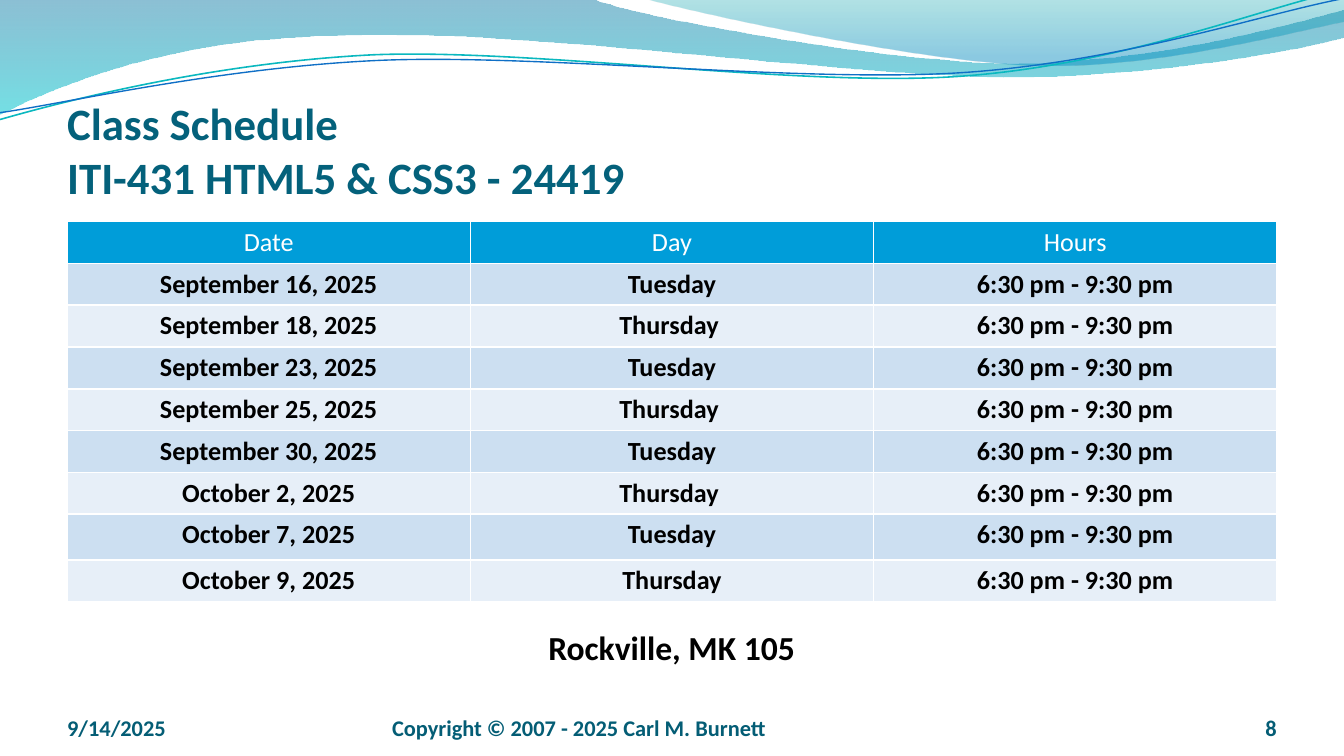
"""Build the class schedule slide with its wave header and session table."""
from dataclasses import dataclass

from lxml.etree import SubElement
from pptx import Presentation
from pptx.dml.color import RGBColor as Color
from pptx.enum.text import MSO_ANCHOR as Anchor, PP_ALIGN as Align
from pptx.oxml.ns import qn
from pptx.util import Cm, Pt


@dataclass(frozen=True)
class Theme:
    font: str = "Calibri"
    title: str = "04617B"
    footer: str = "045D75"
    ink: str = "000000"
    white: str = "FFFFFF"
    header: str = "009DD9"
    bands: tuple = ("CCDFF1", "E7EFF8")
    back_wave: tuple = ((0, "0074A1", 45), (1, "00C6CF", 55))
    front_wave: tuple = ((0, "00A1A9", 30), (0.8, "008BBF", 45))
    teal_line: str = "0AB8BF"
    blue_line: str = "0F6FC6"
    title_size: int = 24
    room_size: int = 18
    table_size: int = 14
    footer_size: int = 12


THEME = Theme()

BACK_WAVE = [
    [(0, 0)],
    [(11.18, -0.03)],
    [(12.09, 0.33), (16.87, 1.19), (19.25, 1.19)],
    [(21.67, 1.19), (24.33, 0.48), (25.4, 0.18)],
    [(25.43, 0.69)],
    [(24.97, 0.84), (22.1, 1.45), (18.95, 1.45)],
    [(15.8, 1.42), (9.7, 0.53), (6.53, 0.66)],
    [(3.28, 0.69), (1.17, 1.57), (-0.03, 2.16)],
]
FRONT_WAVE = [
    [(12.17, -0.03)],
    [(12.93, 0.2), (17.32, 1.17), (19.53, 1.24)],
    [(21.74, 1.32), (24.41, 0.61), (25.4, 0.41)],
    [(25.4, 0)],
]
TEAL_LINE = [
    [(-0.04, 1.66)],
    [(1.19, 1.37), (4.02, 0.78), (7.05, 0.77)],
    [(10.07, 0.79), (15.01, 1.76), (18.06, 1.7)],
    [(21.14, 1.64), (23.88, 0.68), (25.4, 0.42)],
]
BLUE_LINE = [
    [(-0.03, 1.53)],
    [(1.16, 1.42), (4.17, 0.87), (7.2, 0.88)],
    [(10.25, 0.9), (15.14, 1.69), (18.19, 1.63)],
    [(21.22, 1.57), (23.93, 0.78), (25.44, 0.57)],
]

HEADINGS = ("Date", "Day", "Hours")
HOURS = "6:30 pm - 9:30 pm"
SESSIONS = (
    ("September 16, 2025", "Tuesday"),
    ("September 18, 2025", "Thursday "),
    ("September 23, 2025", "Tuesday"),
    ("September 25, 2025", "Thursday "),
    ("September 30, 2025", "Tuesday"),
    ("October 2, 2025", "Thursday "),
    ("October 7, 2025", "Tuesday"),
    ("October 9, 2025", "Thursday"),
)


def bend(shape, segments):
    """Turn each run of three line segments into one cubic curve."""
    lines = shape.element.spPr.iter(qn("a:lnTo"))
    lines = iter(list(lines))
    for segment in segments[1:]:
        group = [next(lines) for _ in segment]
        if len(group) == 3:
            first, *others = group
            first.tag = qn("a:cubicBezTo")
            for line in others:
                first.append(line[0])
                line.getparent().remove(line)


def add_path(slide, segments, close):
    """Draw a path given in centimetres and return its shape."""
    points = [(Cm(x), Cm(y)) for segment in segments for x, y in segment]
    builder = slide.shapes.build_freeform(*points[0])
    builder.add_line_segments(points[1:], close=close)
    shape = builder.convert_to_shape()
    shape.shadow.inherit = False
    bend(shape, segments)
    return shape


def add_wave(slide, segments, stops):
    """Add a closed wave with a translucent downward gradient."""
    shape = add_path(slide, segments, True)
    shape.line.fill.background()
    shape.fill.gradient()
    shape.fill.gradient_angle = 270
    for stop, (position, color, _) in zip(shape.fill.gradient_stops, stops):
        stop.position = position
        stop.color.rgb = Color.from_string(color)
    tints = shape.element.spPr.iter(qn("a:srgbClr"))
    for tint, (_, _, opacity) in zip(list(tints), stops):
        SubElement(tint, qn("a:alpha"), val=str(opacity * 1000))


def add_curve(slide, segments, color, width):
    """Add an open curved line, tilted slightly upwards."""
    shape = add_path(slide, segments, False)
    shape.rotation = 357.3
    shape.fill.background()
    shape.line.color.rgb = Color.from_string(color)
    shape.line.width = Pt(width)


def add_run(paragraph, text, size, color, bold=True):
    """Append one formatted run to a paragraph."""
    run = paragraph.add_run()
    run.text = text
    run.font.name = THEME.font
    run.font.size = Pt(size)
    run.font.bold = bold
    run.font.color.rgb = Color.from_string(color)


def add_text(slide, box, lines, size, color, align=Align.LEFT, anchor=Anchor.BOTTOM):
    """Add a text box whose lines share one paragraph."""
    shape = slide.shapes.add_textbox(*map(Cm, box))
    frame = shape.text_frame
    frame.word_wrap = True
    frame.vertical_anchor = anchor
    frame.margin_left = frame.margin_right = frame.margin_top = frame.margin_bottom = 0
    paragraph = frame.paragraphs[0]
    paragraph.alignment = align
    for index, line in enumerate(lines):
        if index:
            paragraph.add_line_break()
        add_run(paragraph, line, size, color)


def set_borders(cell):
    """Give a cell thin white borders."""
    properties = cell._tc.get_or_add_tcPr()
    for side in "LRTB":
        line = SubElement(properties, qn(f"a:ln{side}"), w=str(Pt(1)))
        SubElement(SubElement(line, qn("a:solidFill")), qn("a:srgbClr"), val=THEME.white)


def fill_cell(cell, text, fill, color, bold):
    """Write and style one table cell."""
    set_borders(cell)
    cell.fill.solid()
    cell.fill.fore_color.rgb = Color.from_string(fill)
    cell.margin_left = cell.margin_right = Cm(0.23)
    cell.margin_top = cell.margin_bottom = Cm(0.09)
    paragraph = cell.text_frame.paragraphs[0]
    paragraph.alignment = Align.CENTER
    add_run(paragraph, text, THEME.table_size, color, bold)


def add_schedule(slide):
    """Add the table of class sessions."""
    rows = [HEADINGS, *((date, day, HOURS) for date, day in SESSIONS)]
    frame = slide.shapes.add_table(
        len(rows), len(HEADINGS), Cm(1.27), Cm(4.19), Cm(22.86), Cm(7.11))
    table = frame.table
    table.horz_banding = False
    for index, values in enumerate(rows):
        is_header = index == 0
        table.rows[index].height = Cm(0.86 if index == 7 else 0.79)
        fill = THEME.header if is_header else THEME.bands[(index - 1) % 2]
        color = THEME.white if is_header else THEME.ink
        for column, text in enumerate(values):
            fill_cell(table.cell(index, column), text, fill, color, not is_header)


def main():
    """Build and save the presentation."""
    presentation = Presentation()
    presentation.slide_width, presentation.slide_height = Cm(25.4), Cm(14.29)
    slide = presentation.slides.add_slide(presentation.slide_layouts[6])
    add_wave(slide, BACK_WAVE, THEME.back_wave)
    add_wave(slide, FRONT_WAVE, THEME.front_wave)
    add_curve(slide, TEAL_LINE, THEME.teal_line, 0.85)
    add_curve(slide, BLUE_LINE, THEME.blue_line, 0.75)
    add_text(slide, (1.27, 1.46, 22.86, 2.39), ("Class Schedule", "ITI-431 HTML5 & CSS3 - 24419"),
             THEME.title_size, THEME.title)
    add_schedule(slide)
    for left, width, text, align in (
        (1.27, 5.92, "9/14/2025", Align.LEFT),
        (7.41, 9.32, "Copyright © 2007 - 2025 Carl M. Burnett", Align.LEFT),
        (22.02, 2.11, "8", Align.RIGHT),
    ):
        add_text(slide, (left, 13.24, width, 0.76), (text,), THEME.footer_size, THEME.footer, align)
    add_text(slide, (10.09, 11.73, 5.21, 1.02), ("Rockville, MK 105",),
             THEME.room_size, THEME.ink, Align.CENTER, Anchor.MIDDLE)
    presentation.save("out.pptx")


if __name__ == "__main__":
    main()
